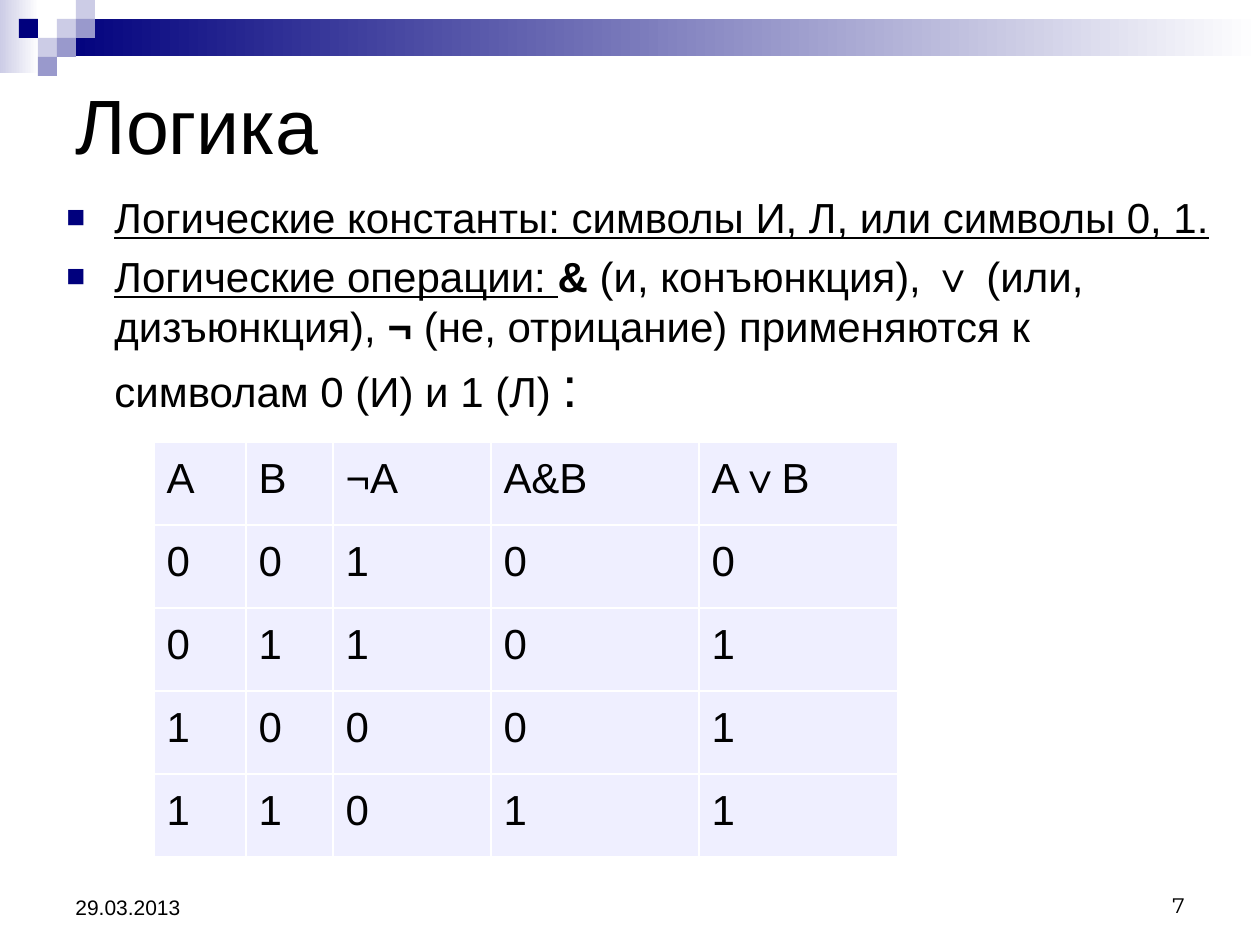
from lxml.etree import SubElement
from pptx import Presentation
from pptx.dml.color import RGBColor
from pptx.enum.shapes import MSO_SHAPE
from pptx.enum.text import MSO_ANCHOR, PP_ALIGN
from pptx.oxml.ns import qn
from pptx.util import Pt

NAVY, BLUE, PALE, WHITE = "00007D", "9999CC", "CCCCE6", "FFFFFF"
SCALE = 914400 / 126


def px(n):
    return round(n * SCALE)


def color(value):
    return RGBColor.from_string(value)


def add_run(p, text, size=24, font="Arial", bold=False, underline=False):
    r = p.add_run()
    r.text = text
    r.font.size = Pt(size)
    r.font.name = font
    r.font.bold = bold
    r.font.underline = underline
    r.font.color.rgb = color("000000")


class SlideBuilder:
    cell_fill = "EFEFFF"
    border = WHITE
    bullet = NAVY

    def __init__(self, prs):
        self.s = prs.slides.add_slide(prs.slide_layouts[5])

    def title(self, text, box):
        sp = self.s.shapes.title
        sp.left, sp.top, sp.width, sp.height = map(px, box)
        tf = sp.text_frame
        tf.vertical_anchor = MSO_ANCHOR.MIDDLE
        p = tf.paragraphs[0]
        p.alignment = PP_ALIGN.LEFT
        add_run(p, text, size=44)

    def rect(self, box, fill, fade=False):
        sp = self.s.shapes.add_shape(MSO_SHAPE.RECTANGLE, *map(px, box))
        sp.shadow.inherit = False
        sp.line.fill.background()
        if fade:
            sp.fill.gradient()
            sp.fill.gradient_angle = 0
            for stop, value, at in zip(sp.fill.gradient_stops, (fill, WHITE), (0, 1)):
                stop.color.rgb = color(value)
                stop.position = at
        else:
            sp.fill.solid()
            sp.fill.fore_color.rgb = color(fill)

    def text_box(self, box, anchor=MSO_ANCHOR.TOP):
        tf = self.s.shapes.add_textbox(*map(px, box)).text_frame
        tf.word_wrap = True
        tf.vertical_anchor = anchor
        return tf

    def footer(self, text, box, align=PP_ALIGN.LEFT, **fmt):
        p = self.text_box(box, MSO_ANCHOR.BOTTOM).paragraphs[0]
        p.alignment = align
        add_run(p, text, size=12, **fmt)

    def bullets(self, items, box):
        tf = self.text_box(box)
        for i, runs in enumerate(items):
            p = tf.paragraphs[0] if i == 0 else tf.add_paragraph()
            p.space_before = Pt(5)
            pPr = p._p.get_or_add_pPr()
            pPr.set("marL", str(px(48)))
            pPr.set("indent", str(-px(48)))
            clr = SubElement(pPr, qn("a:buClr"))
            SubElement(clr, qn("a:srgbClr"), val=self.bullet)
            SubElement(pPr, qn("a:buSzPct"), val="75000")
            SubElement(pPr, qn("a:buFont"), typeface="Arial")
            SubElement(pPr, qn("a:buChar"), char="■")
            for text, fmt in runs:
                add_run(p, text, **fmt)

    def table(self, rows, left, top, widths, row_height):
        frame = self.s.shapes.add_table(
            len(rows), len(widths), px(left), px(top),
            px(sum(widths)), px(row_height * len(rows)))
        table = frame.table
        table.first_row = table.horz_banding = False
        for col, width in zip(table.columns, widths):
            col.width = px(width)
        for i, row in enumerate(rows):
            table.rows[i].height = px(row_height)
            for j, text in enumerate(row):
                self.cell(table.cell(i, j), text)

    def cell(self, cell, text):
        tcPr = cell._tc.get_or_add_tcPr()
        for side in "LRTB":
            ln = SubElement(tcPr, qn(f"a:ln{side}"), w=str(Pt(1)))
            fill = SubElement(ln, qn("a:solidFill"))
            SubElement(fill, qn("a:srgbClr"), val=self.border)
        cell.fill.solid()
        cell.fill.fore_color.rgb = color(self.cell_fill)
        p = cell.text_frame.paragraphs[0]
        p.alignment = PP_ALIGN.JUSTIFY
        p.line_spacing = 1.15
        add_run(p, text)


def main():
    prs = Presentation()
    prs.slide_width, prs.slide_height = px(1260), px(945)
    b = SlideBuilder(prs)

    b.rect((0, 0, 39, 73), PALE, fade=True)
    b.rect((57, 19, 1203, 37), NAVY, fade=True)
    squares = [(3, 1, PALE), (4, 0, PALE), (4, 1, BLUE), (2, 2, PALE),
               (1, 1, NAVY), (3, 2, BLUE), (2, 3, BLUE)]
    for col, row, fill in squares:
        b.rect((19 * col, 19 * row, 19, 19), fill)

    b.footer("7", (903, 861, 294, 63), PP_ALIGN.RIGHT, font="Montserrat")
    b.footer("29.03.2013", (63, 861, 294, 65))

    plain, bold, under = {}, {"bold": True}, {"underline": True}
    b.bullets([
        [("Логические константы: символы И, Л, или символы 0, 1.", under)],
        [("Логические операции: ", under), ("&", bold),
         (" (и, конъюнкция), ", plain), ("∨", bold),
         (" (или, дизъюнкция), ", plain), ("¬", bold),
         (" (не, отрицание) применяются к символам 0 (И) и 1 (Л) ", plain),
         (":", {"size": 32})],
    ], (54, 185, 1191, 238))

    truth_table = [("A", "B", "¬A", "A&B", "A∨B"), "00100", "01101", "10001", "11011"]
    b.table(truth_table, 154, 442, (92, 87, 158, 208, 199), 83)
    b.title("Логика", (63, 63, 1134, 122))
    prs.save("out.pptx")


if __name__ == "__main__":
    main()
